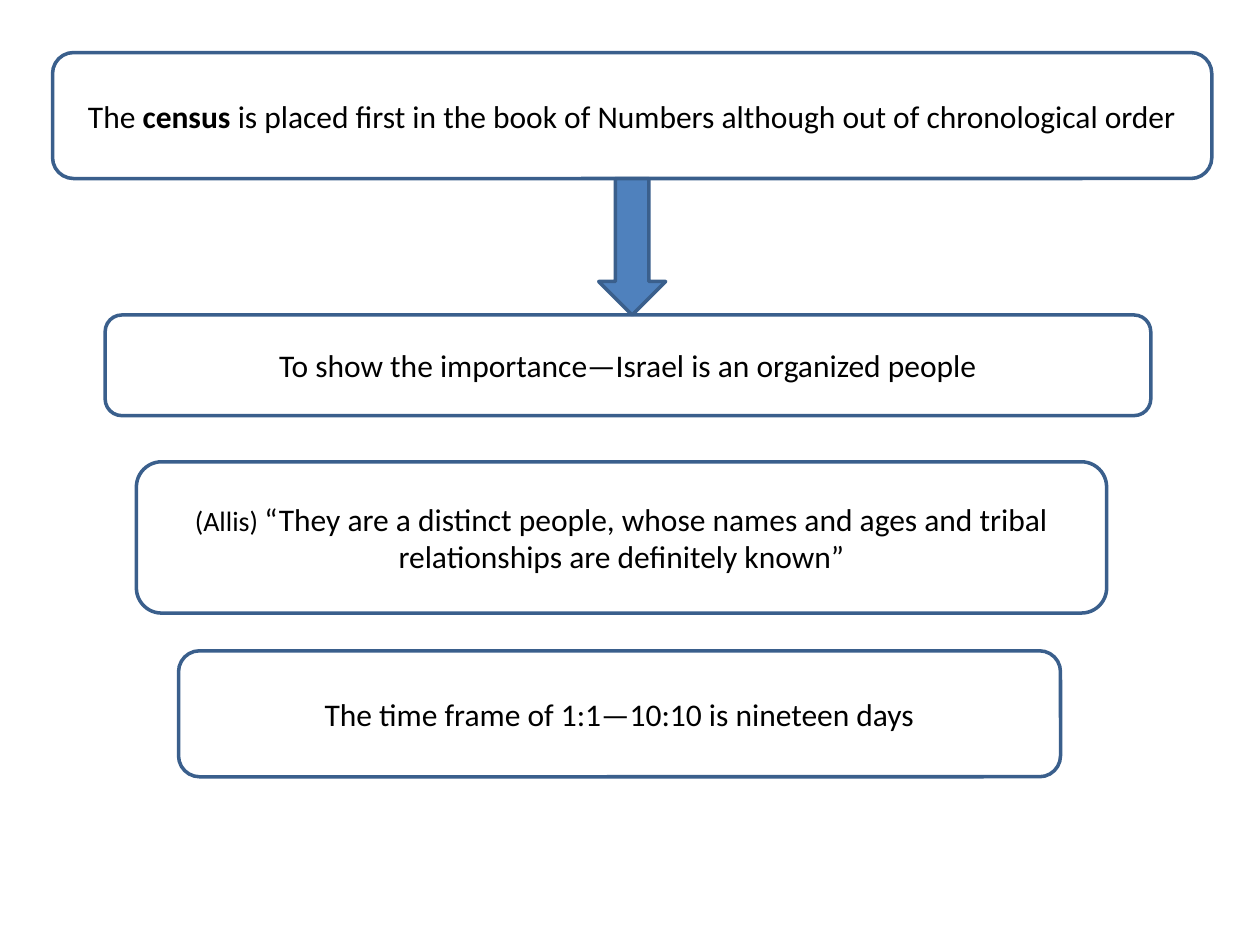
"""Build a slide on why the census comes first in the book of Numbers."""
import pptx
import pptx.dml.color
import pptx.enum.shapes
import pptx.enum.text
import pptx.util

Cm = pptx.util.Cm
Pt = pptx.util.Pt
RGBColor = pptx.dml.color.RGBColor
MSO_SHAPE = pptx.enum.shapes.MSO_SHAPE

WHITE = RGBColor(0xFF, 0xFF, 0xFF)
BLACK = RGBColor(0x00, 0x00, 0x00)
BLUE = RGBColor(0x4F, 0x81, 0xBD)
DARK_BLUE = RGBColor(0x3A, 0x5F, 0x8C)

STATEMENTS = [
    ((1.06, 1.06, 23.37, 2.54), [
        ("The", 18, False),
        (" census ", 18, True),
        ("is placed first in the book of Numbers although out of chronological order", 18, False),
    ]),
    ((2.12, 6.35, 21.08, 2.03), [
        ("To show the importance—Israel is an organized people", 18, False),
    ]),
    ((2.75, 9.31, 19.56, 3.05), [
        ("(Allis) ", 16, False),
        ("“They are a distinct people, whose names and ages and tribal "
         "relationships are definitely known”", 18, False),
    ]),
    ((3.6, 13.12, 17.78, 2.54), [
        ("The time frame of 1:1—10:10 is nineteen days", 18, False),
    ]),
]
ARROW_WIDTH = 1.35


def add_outlined(slide, kind, place, fill):
    outlined = slide.shapes.add_shape(kind, *(Cm(length) for length in place))
    outlined.shadow.inherit = False
    outlined.fill.solid()
    outlined.fill.fore_color.rgb = fill
    outlined.line.color.rgb = DARK_BLUE
    outlined.line.width = Pt(2)
    return outlined


def add_statement(slide, place, phrases):
    frame = add_outlined(slide, MSO_SHAPE.ROUNDED_RECTANGLE, place, WHITE).text_frame
    frame.word_wrap = True
    frame.vertical_anchor = pptx.enum.text.MSO_ANCHOR.MIDDLE
    sentence = frame.paragraphs[0]
    sentence.alignment = pptx.enum.text.PP_ALIGN.CENTER
    for words, size, bold in phrases:
        phrase = sentence.add_run()
        phrase.text = words
        phrase.font.name = "Calibri"
        phrase.font.size = Pt(size)
        phrase.font.bold = bold
        phrase.font.color.rgb = BLACK


def main():
    deck = pptx.Presentation()
    deck.slide_width, deck.slide_height = Cm(25.4), Cm(19.05)
    slide = deck.slides.add_slide(deck.slide_layouts[6])
    for place, phrases in STATEMENTS:
        add_statement(slide, place, phrases)

    left, top, width, height = STATEMENTS[0][0]
    arrow_top = top + height
    arrow_left = left + (width - ARROW_WIDTH) / 2
    arrow_height = STATEMENTS[1][0][1] - arrow_top
    add_outlined(slide, MSO_SHAPE.DOWN_ARROW,
                 (arrow_left, arrow_top, ARROW_WIDTH, arrow_height), BLUE)
    deck.save("out.pptx")


if __name__ == "__main__":
    main()
